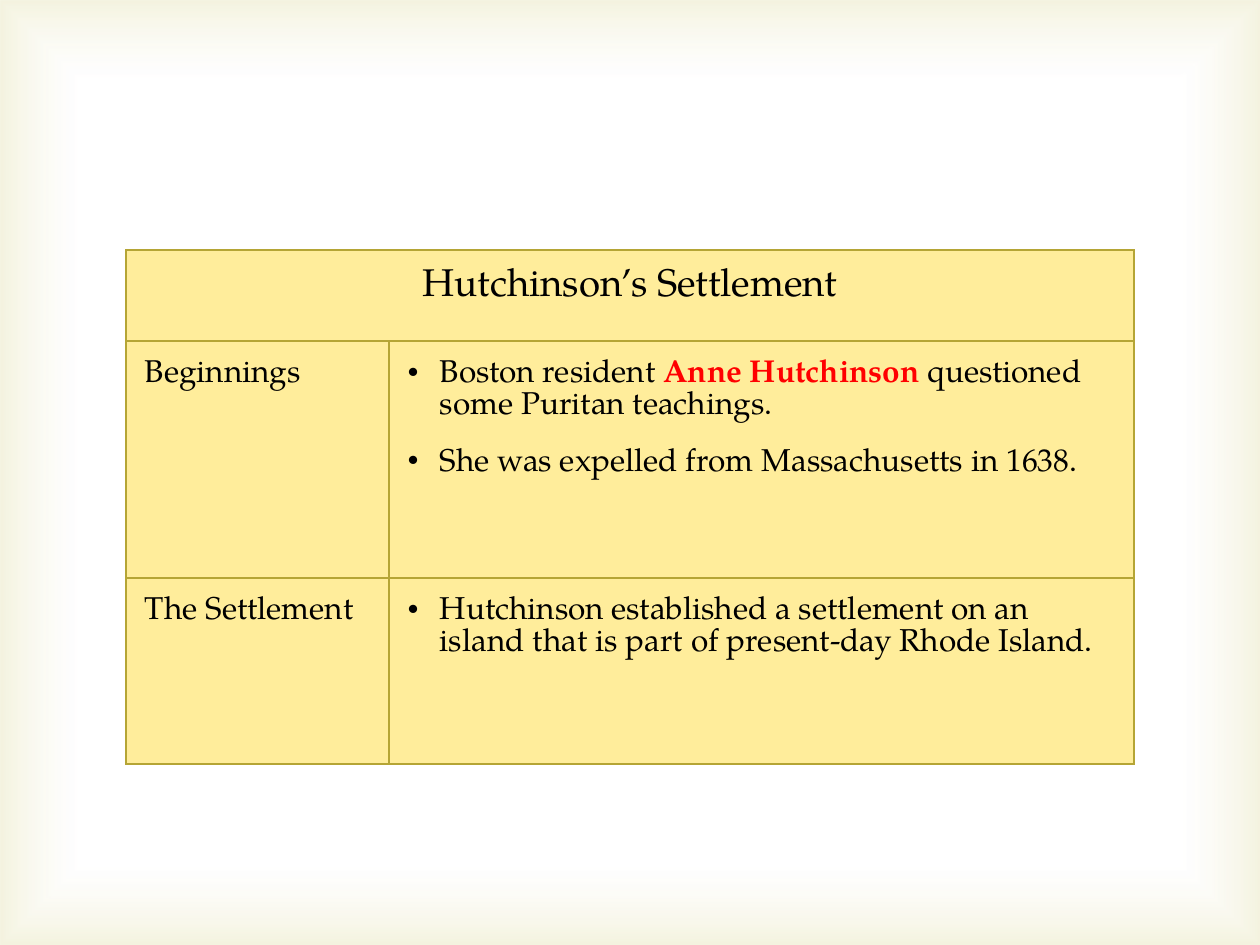
from lxml import etree
from pptx import Presentation
from pptx.dml.color import RGBColor
from pptx.enum.shapes import MSO_SHAPE
from pptx.enum.text import PP_ALIGN
from pptx.oxml import parse_xml
from pptx.oxml.ns import nsdecls, qn
from pptx.util import Pt

RECTANGLE = MSO_SHAPE.RECTANGLE
CENTER, LEFT = PP_ALIGN.CENTER, PP_ALIGN.LEFT

PX = 914400 / 126
COLORS = {
    "text": "000000", "key": "FF0000", "cell": "FFED9B",
    "border": "B5A535", "center": "FFFFFF", "edge": "D1CA75",
}
FONT = "TeX Gyre Pagella"
TITLE_SIZE, BODY_SIZE = 22, 18

TITLE = "Hutchinson’s Settlement"
# Each topic has a list of points; a point is a list of (text, is key term)
TOPICS = [
    ("Beginnings", [
        [("Boston resident ", False), ("Anne Hutchinson ", True),
         ("questioned some Puritan teachings.", False)],
        [("She was expelled from Massachusetts in 1638.", False)],
    ]),
    ("The Settlement", [
        [("Hutchinson established a settlement on an island that is part of "
          "present-day Rhode Island.", False)],
    ]),
]

SLIDE_SIZE = 1260, 945
TABLE_LEFT, TABLE_TOP = 126, 250
COLUMN_WIDTHS = [263, 745]
ROW_HEIGHTS = [91, 237, 186]
INSET, INDENT = 19, 32


def emu(px):
    return round(px * PX)


def rgb(name):
    return RGBColor.from_string(COLORS[name])


def add_glow(slide):
    """Tint the slide's edges with a gradient that is clear in the middle."""
    glow = slide.shapes.add_shape(RECTANGLE, 0, 0, *map(emu, SLIDE_SIZE))
    glow.shadow.inherit = False
    glow.line.fill.background()
    stops = "".join(
        f'<a:gs pos="{pos}000"><a:srgbClr val="{COLORS[name]}">'
        f'<a:alpha val="{alpha}000"/></a:srgbClr></a:gs>'
        for pos, name, alpha in [(83, "center", 11), (100, "edge", 23)])
    gradient = parse_xml(
        f'<a:gradFill {nsdecls("a")} rotWithShape="1"><a:gsLst>{stops}</a:gsLst>'
        '<a:path path="rect"><a:fillToRect l="50000" t="50000" r="50000" '
        'b="50000"/></a:path></a:gradFill>')
    glow._element.spPr.find(qn("a:prstGeom")).addnext(gradient)


def style_cell(cell):
    cell.margin_left = cell.margin_right = emu(INSET)
    cell.margin_top = cell.margin_bottom = emu(INSET)
    cell.fill.solid()
    cell.fill.fore_color.rgb = rgb("cell")
    properties = cell._tc.get_or_add_tcPr()
    for position, side in enumerate("LRTB"):
        properties.insert(position, parse_xml(
            f'<a:ln{side} {nsdecls("a")} w="{Pt(1)}"><a:solidFill>'
            f'<a:srgbClr val="{COLORS["border"]}"/></a:solidFill></a:ln{side}>'))


def write(cell, points, size=BODY_SIZE, align=LEFT, bulleted=False):
    frame = cell.text_frame
    for number, point in enumerate(points):
        paragraph = frame.add_paragraph() if number else frame.paragraphs[0]
        paragraph.alignment = align
        if bulleted:
            properties = paragraph._p.get_or_add_pPr()
            properties.set("marL", str(emu(INDENT)))
            properties.set("indent", str(-emu(INDENT)))
            etree.SubElement(properties, qn("a:buChar")).set("char", "•")
            paragraph.space_after = Pt(0.6 * size)
        if number:
            paragraph.space_before = Pt(0.2 * size)
        paragraph.font.name = FONT
        paragraph.font.size = Pt(size)
        for text, is_key in point:
            run = paragraph.add_run()
            run.text = text
            run.font.bold = is_key
            run.font.color.rgb = rgb("key" if is_key else "text")


def add_settlement_table(slide):
    table = slide.shapes.add_table(
        len(ROW_HEIGHTS), len(COLUMN_WIDTHS), emu(TABLE_LEFT), emu(TABLE_TOP),
        emu(sum(COLUMN_WIDTHS)), emu(sum(ROW_HEIGHTS))).table
    table.first_row = table.horz_banding = False
    for column, width in zip(table.columns, COLUMN_WIDTHS):
        column.width = emu(width)
    for row, height in zip(table.rows, ROW_HEIGHTS):
        row.height = emu(height)
        for cell in row.cells:
            style_cell(cell)
    table.cell(0, 0).merge(table.cell(0, 1))
    write(table.cell(0, 0), [[(TITLE, False)]], TITLE_SIZE, CENTER)
    for row, (topic, points) in enumerate(TOPICS, start=1):
        write(table.cell(row, 0), [[(topic, False)]])
        write(table.cell(row, 1), points, bulleted=True)


def main():
    presentation = Presentation()
    presentation.slide_width, presentation.slide_height = map(emu, SLIDE_SIZE)
    slide = presentation.slides.add_slide(presentation.slide_layouts[6])
    add_glow(slide)
    add_settlement_table(slide)
    presentation.save("out.pptx")


if __name__ == "__main__":
    main()
